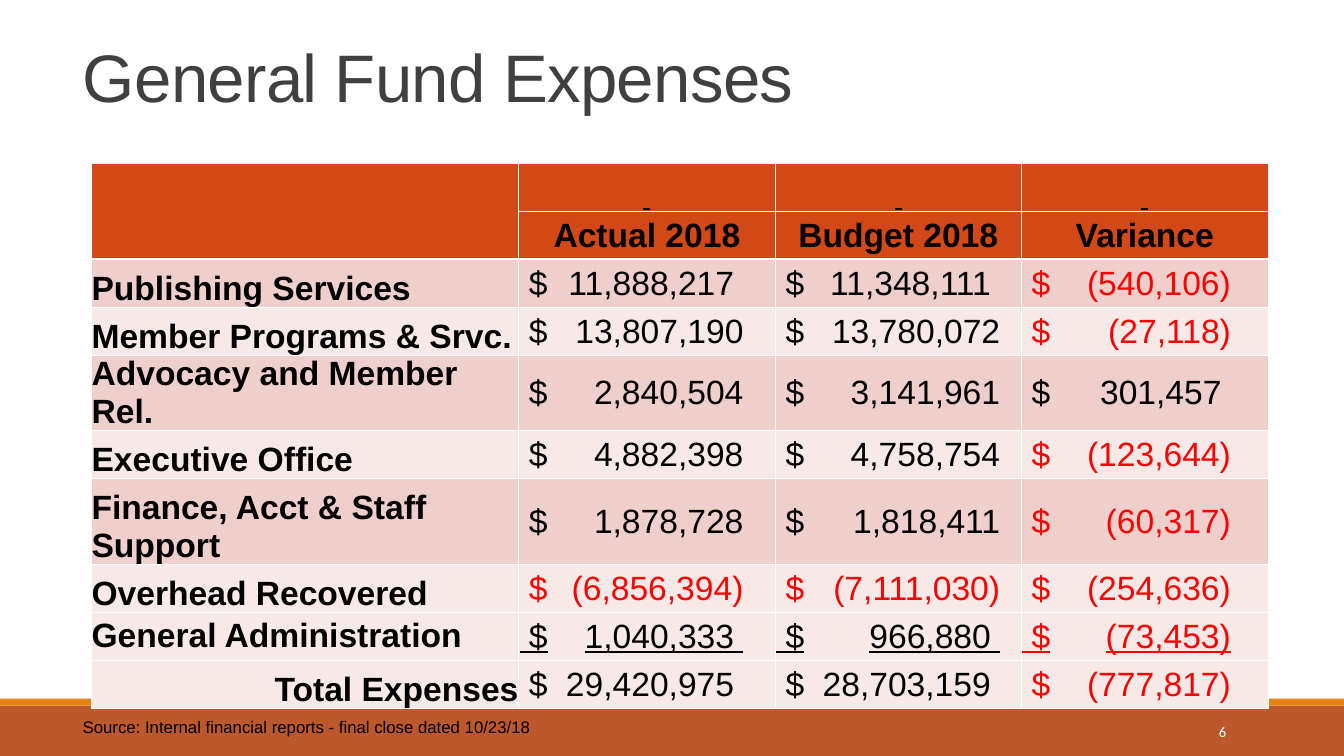
from lxml import etree
from pptx import Presentation
from pptx import util as u
from pptx.dml.color import RGBColor
from pptx.enum import shapes, text
from pptx.oxml import ns

LEFT, CENTER, RIGHT = text.PP_ALIGN.LEFT, text.PP_ALIGN.CENTER, text.PP_ALIGN.RIGHT
TOP, MIDDLE, BOTTOM = text.MSO_ANCHOR.TOP, text.MSO_ANCHOR.MIDDLE, text.MSO_ANCHOR.BOTTOM

PERIODS = ["Actual 2018", "Budget 2018", "Variance"]
EXPENSES = [
    ("Publishing Services", "11,888,217 ", "11,348,111 ", "(540,106)"),
    ("Member Programs & Srvc.", "13,807,190", "13,780,072", "(27,118)"),
    ("Advocacy and Member Rel.", "2,840,504", "3,141,961", "301,457 "),
    ("Executive Office", "4,882,398", "4,758,754", "(123,644)"),
    ("Finance, Acct & Staff Support", "1,878,728", "1,818,411", "(60,317)"),
    ("Overhead Recovered", "(6,856,394)", "(7,111,030)", "(254,636)"),
    ("General Administration", "1,040,333 ", "966,880 ", "(73,453)"),
    ("Total Expenses", "29,420,975 ", "28,703,159 ", "(777,817)"),
]
COLUMN_WIDTHS = [305, 183.4, 175.8, 176.4]
AMOUNT_STOPS = [160, 160, 149]
ROW_HEIGHT = 34.25
TALL_ROWS = {"Advocacy and Member Rel.": 53.6, "Finance, Acct & Staff Support": 61.5}


def colour(code):
    return RGBColor.from_string(code)


class ReportSlide:
    font = "Arial"
    black, red, white = "000000", "FF0000", "FFFFFF"
    header, dark_band, light_band = "D34817", "EFCFCC", "F7E9E7"

    def __init__(self, deck):
        self.slide = deck.slides.add_slide(deck.slide_layouts[5])

    def wording(self, frame, words, size, code=black, align=LEFT, anchor=TOP,
                bold=False, underline=False, font=None):
        frame.text = words
        frame.vertical_anchor = anchor
        paragraph = frame.paragraphs[0]
        paragraph.alignment = align
        for run in paragraph.runs:
            run.font.name = font or self.font
            run.font.size = u.Pt(size)
            run.font.bold = bold
            run.font.underline = underline
            run.font.color.rgb = colour(code)
        return paragraph

    def title(self, words, left, top, width, height):
        heading = self.slide.shapes.title
        heading.left, heading.top = u.Pt(left), u.Pt(top)
        heading.width, heading.height = u.Pt(width), u.Pt(height)
        frame = heading.text_frame
        frame.word_wrap = True
        frame.auto_size = text.MSO_AUTO_SIZE.NONE
        paragraph = self.wording(frame, words, 48, "404040", anchor=BOTTOM)
        paragraph.line_spacing = 0.85
        paragraph.runs[0]._r.get_or_add_rPr().set("spc", "-50")

    def band(self, top, height, code):
        stripe = self.slide.shapes.add_shape(
            shapes.MSO_SHAPE.RECTANGLE, 0, u.Pt(top), u.Pt(960), u.Pt(height))
        stripe.shadow.inherit = False
        stripe.fill.solid()
        stripe.fill.fore_color.rgb = colour(code)
        stripe.line.fill.background()

    def label(self, words, left, top, width, height, size, **style):
        box = self.slide.shapes.add_textbox(
            u.Pt(left), u.Pt(top), u.Pt(width), u.Pt(height))
        box.text_frame.word_wrap = True
        self.wording(box.text_frame, words, size, **style)

    def cell(self, cell, words, fill, inset=0.72, bottom_line=1, size=24,
             anchor=MIDDLE, **style):
        cell.margin_left = cell.margin_right = cell.margin_top = u.Pt(inset)
        cell.margin_bottom = 0
        paragraph = self.wording(cell.text_frame, words, size, **style)
        cell.vertical_anchor = anchor
        cell.fill.solid()
        cell.fill.fore_color.rgb = colour(fill)
        properties = cell._tc.get_or_add_tcPr()
        for place, side in enumerate(["lnL", "lnR", "lnT", "lnB"]):
            weight = bottom_line if side == "lnB" else 1
            edge = etree.Element(ns.qn("a:" + side), w=str(u.Pt(weight)))
            paint = etree.SubElement(edge, ns.qn("a:solidFill"))
            etree.SubElement(paint, ns.qn("a:srgbClr"), val=self.white)
            properties.insert(place, edge)
        return paragraph

    def amount(self, cell, value, fill, stop, underline):
        code = self.red if value.startswith("(") else self.black
        paragraph = self.cell(cell, " $\t" + value, fill, code=code, underline=underline)
        stops = etree.SubElement(paragraph._p.get_or_add_pPr(), ns.qn("a:tabLst"))
        etree.SubElement(stops, ns.qn("a:tab"), pos=str(u.Pt(stop)), algn="r")

    def expense_table(self, left, top):
        heights = [ROW_HEIGHT] * 2 + [TALL_ROWS.get(row[0], ROW_HEIGHT) for row in EXPENSES]
        table = self.slide.shapes.add_table(
            len(heights), len(COLUMN_WIDTHS), u.Pt(left), u.Pt(top),
            u.Pt(sum(COLUMN_WIDTHS)), u.Pt(sum(heights))).table
        table.first_row = table.horz_banding = False
        for column, width in zip(table.columns, COLUMN_WIDTHS):
            column.width = u.Pt(width)
        for row, height in zip(table.rows, heights):
            row.height = u.Pt(height)

        for corner in (0, 1):
            self.cell(table.cell(corner, 0), "", self.header, bottom_line=1.5)
        table.cell(0, 0).merge(table.cell(1, 0))
        for c, period in enumerate(PERIODS, 1):
            self.cell(table.cell(0, c), " ", self.header, size=18, align=CENTER,
                      anchor=BOTTOM, bold=True, underline=True)
            self.cell(table.cell(1, c), period, self.header, bottom_line=1.5,
                      align=CENTER, bold=True)

        for r, (name, *amounts) in enumerate(EXPENSES, 2):
            before_total = name == "General Administration"
            fill = self.dark_band if r in (2, 4, 6) else self.light_band
            self.cell(table.cell(r, 0), name, fill, inset=0, bold=True,
                      align=RIGHT if name == "Total Expenses" else LEFT,
                      anchor=MIDDLE if before_total else BOTTOM)
            for c, (value, stop) in enumerate(zip(amounts, AMOUNT_STOPS), 1):
                self.amount(table.cell(r, c), value, fill, stop, before_total)


def main():
    deck = Presentation()
    deck.slide_width, deck.slide_height = u.Pt(960), u.Pt(540)
    report = ReportSlide(deck)
    report.band(504, 36, "BD582C")
    report.band(499, 5, "E48312")
    report.title("General Fund Expenses", 52, 18.7, 849, 67.7)
    report.expense_table(65.4, 116.8)
    report.label("6", 780, 508.3, 103, 28.8, 10.5, code="FFFFFF", align=RIGHT,
                 anchor=MIDDLE, font="Calibri")
    report.label("Source: Internal financial reports - final close dated 10/23/18",
                 52, 508.3, 376, 21.8, 12)
    deck.save("out.pptx")


if __name__ == "__main__":
    main()
